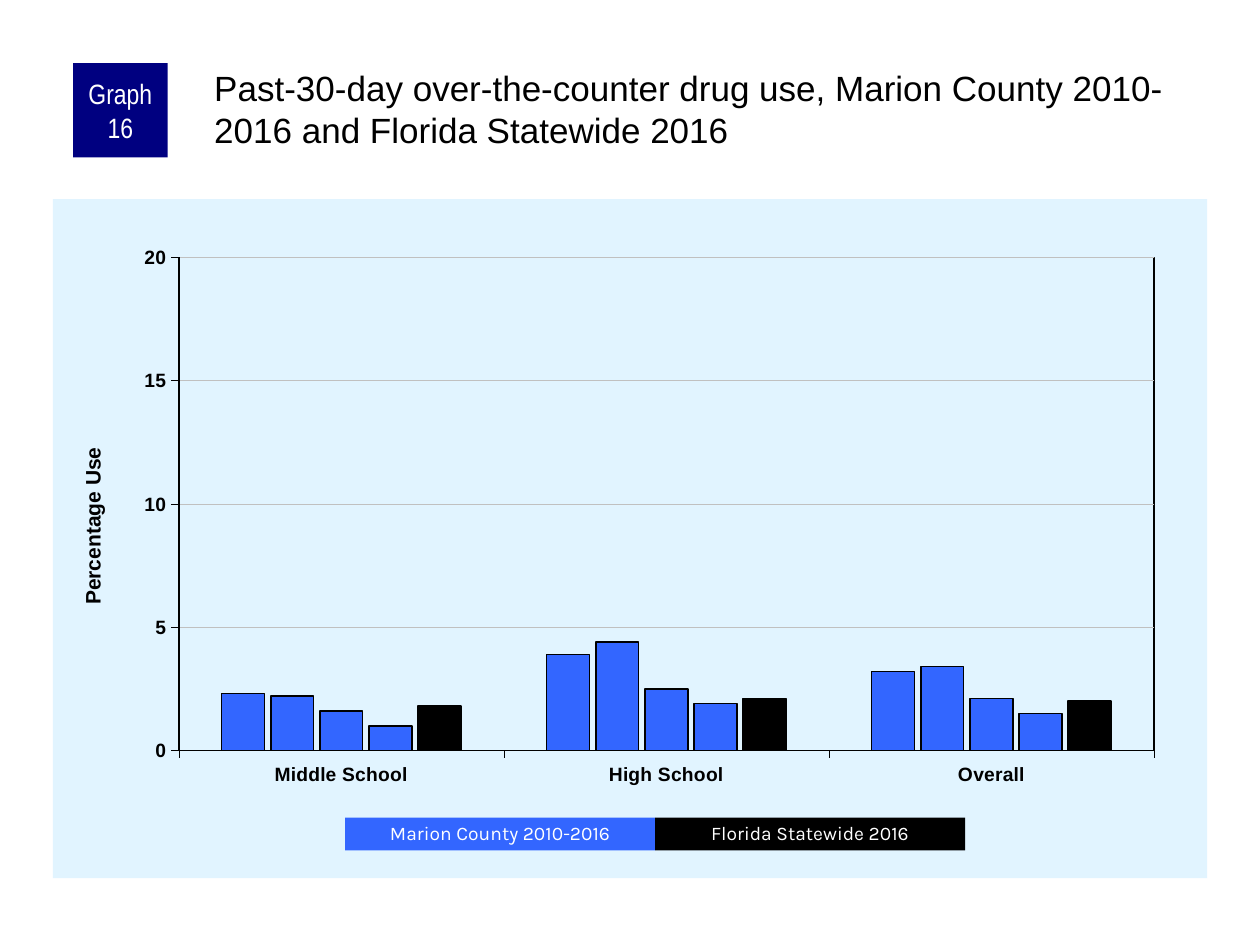
from lxml import etree
from pptx import Presentation
from pptx.chart.data import CategoryChartData
from pptx.dml.color import RGBColor
from pptx.enum.chart import XL_CHART_TYPE, XL_TICK_MARK
from pptx.enum.shapes import MSO_SHAPE
from pptx.enum.text import MSO_ANCHOR, MSO_AUTO_SIZE, PP_ALIGN
from pptx.oxml import parse_xml
from pptx.oxml.ns import nsdecls, qn
from pptx.util import Inches, Pt

COLUMNS = XL_CHART_TYPE.COLUMN_CLUSTERED
OUTSIDE, NO_TICK = XL_TICK_MARK.OUTSIDE, XL_TICK_MARK.NONE
RECTANGLE = MSO_SHAPE.RECTANGLE
TOP, MIDDLE = MSO_ANCHOR.TOP, MSO_ANCHOR.MIDDLE
LEFT, CENTER = PP_ALIGN.LEFT, PP_ALIGN.CENTER

COLORS = {"black": "000000", "white": "FFFFFF", "navy": "000080",
          "county": "3366FF", "panel": "E1F4FF", "grid": "C0C0C0"}

TITLE = ("Past-30-day over-the-counter drug use, Marion County 2010-2016 "
         "and Florida Statewide 2016")
GRAPH_LABEL = "Graph 16"
AXIS_TITLE = "Percentage Use"
SCHOOLS = ["Middle School", "High School", "Overall"]
# name, values by school, fill, outline in points
SERIES = [
    ("Series 1", (2.3, 3.9, 3.2), "county", 0.75),
    ("Series 2", (2.2, 4.4, 3.4), "county", 1),
    ("Series 3", (1.6, 2.5, 2.1), "county", 1),
    ("Series 4", (1.0, 1.9, 1.5), "county", 1),
    ("Series 5", (1.8, 2.1, 2.0), "black", 1),
]
LEGEND = [("Marion County 2010-2016", "county"), ("Florida Statewide 2016", "black")]
LEGEND_LEFT, LEGEND_TOP, KEY_WIDTH, KEY_HEIGHT = 2.74, 6.49, 2.46, 0.26


def rgb(color):
    return RGBColor.from_string(COLORS[color])


def style_font(font, size, name="Arial", color="black", bold=False):
    font.size, font.name, font.bold = Pt(size), name, bold
    font.color.rgb = rgb(color)


def style_line(line, color, width):
    line.color.rgb = rgb(color)
    line.width = Pt(width)


def write(shape, text, size, name="Arial", color="black", align=LEFT, anchor=TOP,
          insets=(0.1, 0.05, 0.1, 0.05), spacing=1.0):
    frame = shape.text_frame
    frame.word_wrap = True
    frame.auto_size = MSO_AUTO_SIZE.NONE
    frame.vertical_anchor = anchor
    (frame.margin_left, frame.margin_top,
     frame.margin_right, frame.margin_bottom) = map(Inches, insets)
    paragraph = frame.paragraphs[0]
    paragraph.alignment, paragraph.line_spacing = align, spacing
    paragraph.space_before = Pt(0)
    run = paragraph.add_run()
    run.text = text
    style_font(run.font, size, name, color)


def add_box(slide, box, fill, text, size, **text_format):
    shape = slide.shapes.add_shape(RECTANGLE, *map(Inches, box))
    shape.shadow.inherit = False
    shape.fill.solid()
    shape.fill.fore_color.rgb = rgb(fill)
    shape.line.fill.background()
    write(shape, text, size, color="white", align=CENTER, anchor=MIDDLE, **text_format)


def set_layout(element, index, target="", **fractions):
    """Place a chart part by fractions of the chart's width and height."""
    for old in element.findall(qn("c:layout")):
        element.remove(old)
    layout = parse_xml(f"<c:layout {nsdecls('c')}><c:manualLayout/></c:layout>")
    settings = {"layoutTarget": target} if target else {}
    settings |= {"xMode": "edge", "yMode": "edge", **fractions}
    for tag, value in settings.items():
        etree.SubElement(layout[0], qn(f"c:{tag}")).set("val", str(value))
    element.insert(index, layout)


def area_format(fill, outline):
    """Return shape properties for a chart area; None means no fill or no line."""
    def paint(color):
        if color is None:
            return "<a:noFill/>"
        return f'<a:solidFill><a:srgbClr val="{COLORS[color]}"/></a:solidFill>'
    return parse_xml(f"<c:spPr {nsdecls('c', 'a')}>{paint(fill)}"
                     f'<a:ln w="9525">{paint(outline)}</a:ln></c:spPr>')


def add_usage_chart(slide):
    data = CategoryChartData(number_format="0.0")
    data.categories = SCHOOLS
    for name, values, _, _ in SERIES:
        data.add_series(name, values)
    box = map(Inches, (0.42, 1.58, 9.16, 5.39))
    chart = slide.shapes.add_chart(COLUMNS, *box, data).chart
    chart.has_title = chart.has_legend = False
    style_font(chart.font, 8)

    plot = chart.plots[0]
    plot.gap_width, plot.overlap, plot.vary_by_categories = 200, -15, False
    for series, (_, _, fill, width) in zip(plot.series, SERIES):
        series.format.fill.solid()
        series.format.fill.fore_color.rgb = rgb(fill)
        style_line(series.format.line, "black", width)

    schools, percent = chart.category_axis, chart.value_axis
    for axis in (schools, percent):
        axis.major_tick_mark, axis.minor_tick_mark = OUTSIDE, NO_TICK
        style_font(axis.tick_labels.font, 11, bold=True)
        style_line(axis.format.line, "black", 0.25)
    percent.minimum_scale, percent.maximum_scale, percent.major_unit = 0, 20, 5
    percent.tick_labels.number_format = "0"
    percent.tick_labels.number_format_is_linked = False
    percent.has_major_gridlines = True
    style_line(percent.major_gridlines.format.line, "grid", 0.25)

    heading = percent.axis_title
    heading.text_frame.text = AXIS_TITLE
    style_font(heading.text_frame.paragraphs[0].runs[0].font, 12, bold=True)
    chart_space = chart.element
    title = chart_space.find(".//" + qn("c:valAx")).find(qn("c:title"))
    body = title.find(".//" + qn("a:bodyPr"))
    body.set("rot", "-5400000")
    body.set("vert", "horz")
    set_layout(title, 1, x=0.02, y=0.36)

    plot_area = chart_space.find(".//" + qn("c:plotArea"))
    set_layout(plot_area, 0, "inner", x=0.109, y=0.086, w=0.845, h=0.726)
    plot_area.append(area_format(None, "black"))
    chart_space.find(qn("c:chart")).addnext(area_format("panel", None))


def main():
    deck = Presentation()
    deck.slide_width, deck.slide_height = Inches(10), Inches(7.5)
    slide = deck.slides.add_slide(deck.slide_layouts[5])

    title = slide.shapes.title
    title.left, title.top, title.width, title.height = map(
        Inches, (1.67, 0.5, 7.92, 0.83))
    write(title, TITLE, 20, insets=(0.03, 0.03, 0, 0))

    add_usage_chart(slide)
    add_box(slide, (0.58, 0.5, 0.75, 0.75), "navy", GRAPH_LABEL, 16,
            name="Arial Narrow", insets=(0.05, 0, 0.05, 0))
    for i, (label, fill) in enumerate(LEGEND):
        key = (LEGEND_LEFT + i * KEY_WIDTH, LEGEND_TOP, KEY_WIDTH, KEY_HEIGHT)
        add_box(slide, key, fill, label, 11, name="Karla", spacing=0.9)

    deck.save("out.pptx")


if __name__ == "__main__":
    main()
